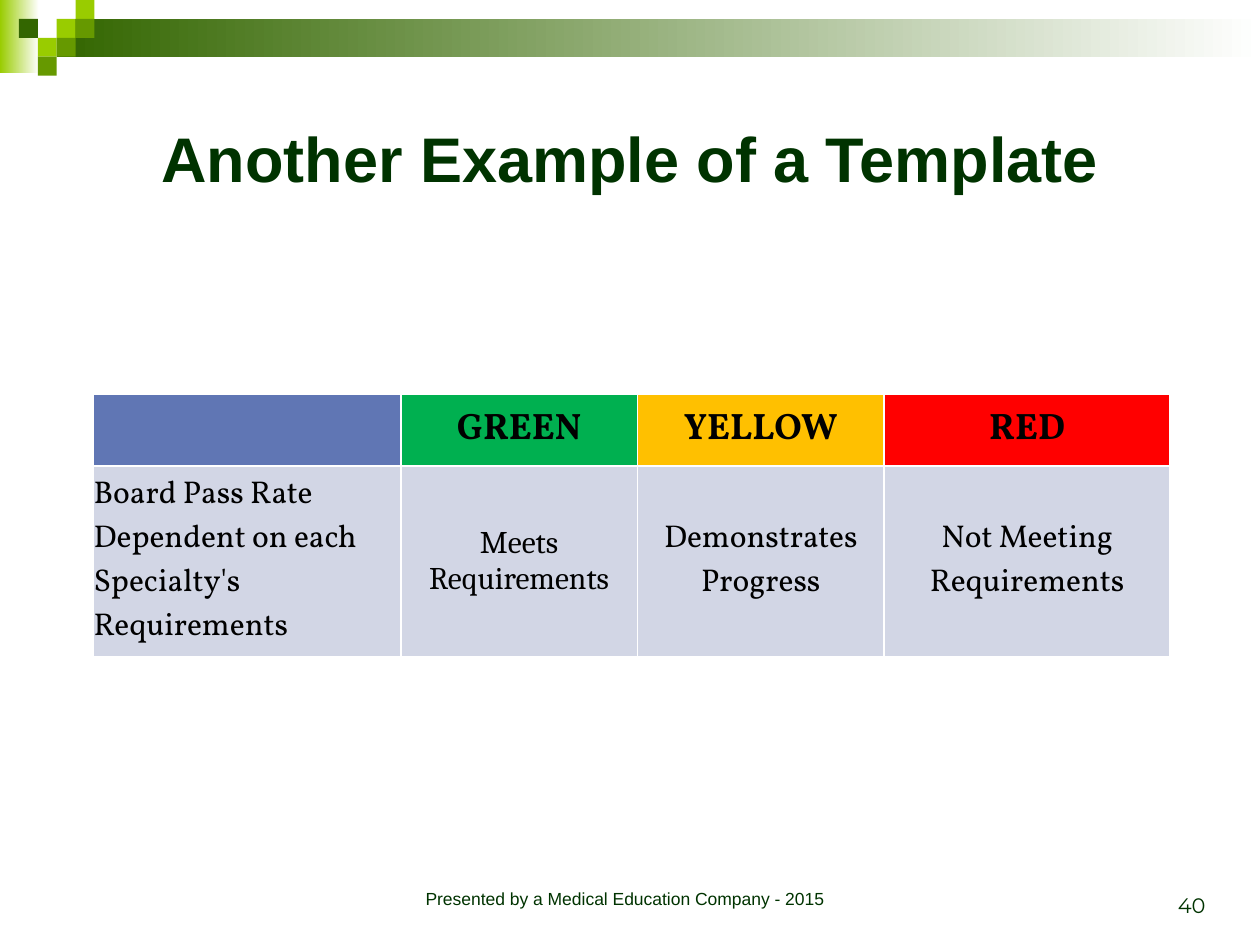
"""Build a slide with a colour-rated requirements table under a green mosaic banner."""
import lxml.etree
import pptx
import pptx.dml.color
import pptx.enum.shapes
import pptx.enum.text
import pptx.oxml.ns
import pptx.util

Pt = pptx.util.Pt
RGBColor = pptx.dml.color.RGBColor
Align = pptx.enum.text.PP_ALIGN
Anchor = pptx.enum.text.MSO_ANCHOR

LIME = RGBColor(0x99, 0xCC, 0x00)
OLIVE = RGBColor(0x66, 0x99, 0x00)
FOREST = RGBColor(0x33, 0x66, 0x00)
DARK_GREEN = RGBColor(0x00, 0x33, 0x00)
WHITE = RGBColor(0xFF, 0xFF, 0xFF)
BLACK = RGBColor(0x00, 0x00, 0x00)
BLUE = RGBColor(0x60, 0x76, 0xB4)
GREEN = RGBColor(0x00, 0xB0, 0x50)
YELLOW = RGBColor(0xFF, 0xC0, 0x00)
RED = RGBColor(0xFF, 0x00, 0x00)
PALE_BLUE = RGBColor(0xD2, 0xD6, 0xE5)

presentation = pptx.Presentation()
presentation.slide_width = Pt(720)
presentation.slide_height = Pt(540)
slide = presentation.slides.add_slide(presentation.slide_layouts[6])


def add_block(left, top, width, height, color, fades=False):
    shape = slide.shapes.add_shape(
        pptx.enum.shapes.MSO_SHAPE.RECTANGLE, Pt(left), Pt(top), Pt(width), Pt(height))
    shape.shadow.inherit = False
    shape.line.fill.background()
    if fades:
        shape.fill.gradient()
        shape.fill.gradient_angle = 0
        for stop, stop_color in zip(shape.fill.gradient_stops, (color, WHITE)):
            stop.color.rgb = stop_color
    else:
        shape.fill.solid()
        shape.fill.fore_color.rgb = color


def write_text(text_frame, text, font_name, size, color, alignment, bold=False):
    text_frame.word_wrap = True
    paragraph = text_frame.paragraphs[0]
    paragraph.text = text
    paragraph.alignment = alignment
    paragraph.font.name = font_name
    paragraph.font.size = Pt(size)
    paragraph.font.bold = bold
    paragraph.font.color.rgb = color


add_block(0, 0, 22.3, 41.8, LIME, fades=True)
add_block(32.4, 10.8, 687.6, 21.6, FOREST, fades=True)
square = 10.8
for column, row, color in [
    (3, 1, LIME), (4, 0, LIME), (4, 1, OLIVE), (2, 2, LIME),
    (1, 1, FOREST), (3, 2, OLIVE), (2, 3, OLIVE),
]:
    add_block(column * square, row * square, square, square, color)

for box, anchor, text, font_name, size, alignment, bold in [
    ((36, 36, 648, 108), Anchor.MIDDLE, "Another Example of a Template",
     "Arial", 36, Align.CENTER, True),
    ((198, 504, 318, 24), Anchor.TOP, "Presented by a Medical Education Company - 2015",
     "Arial", 10, Align.CENTER, False),
    ((528, 492, 168, 36), Anchor.BOTTOM, "40", "Montserrat", 12, Align.RIGHT, False),
]:
    text_box = slide.shapes.add_textbox(*map(Pt, box))
    text_box.text_frame.vertical_anchor = anchor
    write_text(text_box.text_frame, text, font_name, size, DARK_GREEN, alignment, bold)

column_widths = [175.6, 135.2, 141, 163.4]
row_heights = [41, 108.7]
table = slide.shapes.add_table(
    2, 4, Pt(53.5), Pt(225.4), Pt(sum(column_widths)), Pt(sum(row_heights))).table
for column, width in zip(table.columns, column_widths):
    column.width = Pt(width)
for row, height in zip(table.rows, row_heights):
    row.height = Pt(height)

header_fills = [BLUE, GREEN, YELLOW, RED]
cell_texts = [
    ["", "GREEN", "YELLOW", "RED"],
    ["Board Pass Rate\vDependent on each Specialty's Requirements",
     "Meets Requirements", "Demonstrates Progress", "Not Meeting Requirements"],
]
for row, texts in enumerate(cell_texts):
    is_header = row == 0
    border_widths = {"lnL": 1, "lnR": 1, "lnT": 1 if is_header else 1.5,
                     "lnB": 1.5 if is_header else 1}
    for column, text in enumerate(texts):
        cell = table.cell(row, column)
        cell.margin_left = cell.margin_right = cell.margin_top = cell.margin_bottom = 0
        cell.vertical_anchor = Anchor.MIDDLE
        cell.fill.solid()
        cell.fill.fore_color.rgb = header_fills[column] if is_header else PALE_BLUE
        write_text(cell.text_frame, text,
                   "Cambria" if (row, column) == (1, 1) else "Vollkorn",
                   21 if is_header else 18, BLACK,
                   Align.LEFT if column == 0 else Align.CENTER, is_header)
        properties = cell._tc.get_or_add_tcPr()
        for position, (side, width) in enumerate(border_widths.items()):
            border = lxml.etree.Element(pptx.oxml.ns.qn(f"a:{side}"), w=str(Pt(width)))
            fill = lxml.etree.SubElement(border, pptx.oxml.ns.qn("a:solidFill"))
            lxml.etree.SubElement(fill, pptx.oxml.ns.qn("a:srgbClr"), val=str(WHITE))
            properties.insert(position, border)

presentation.save("out.pptx")
